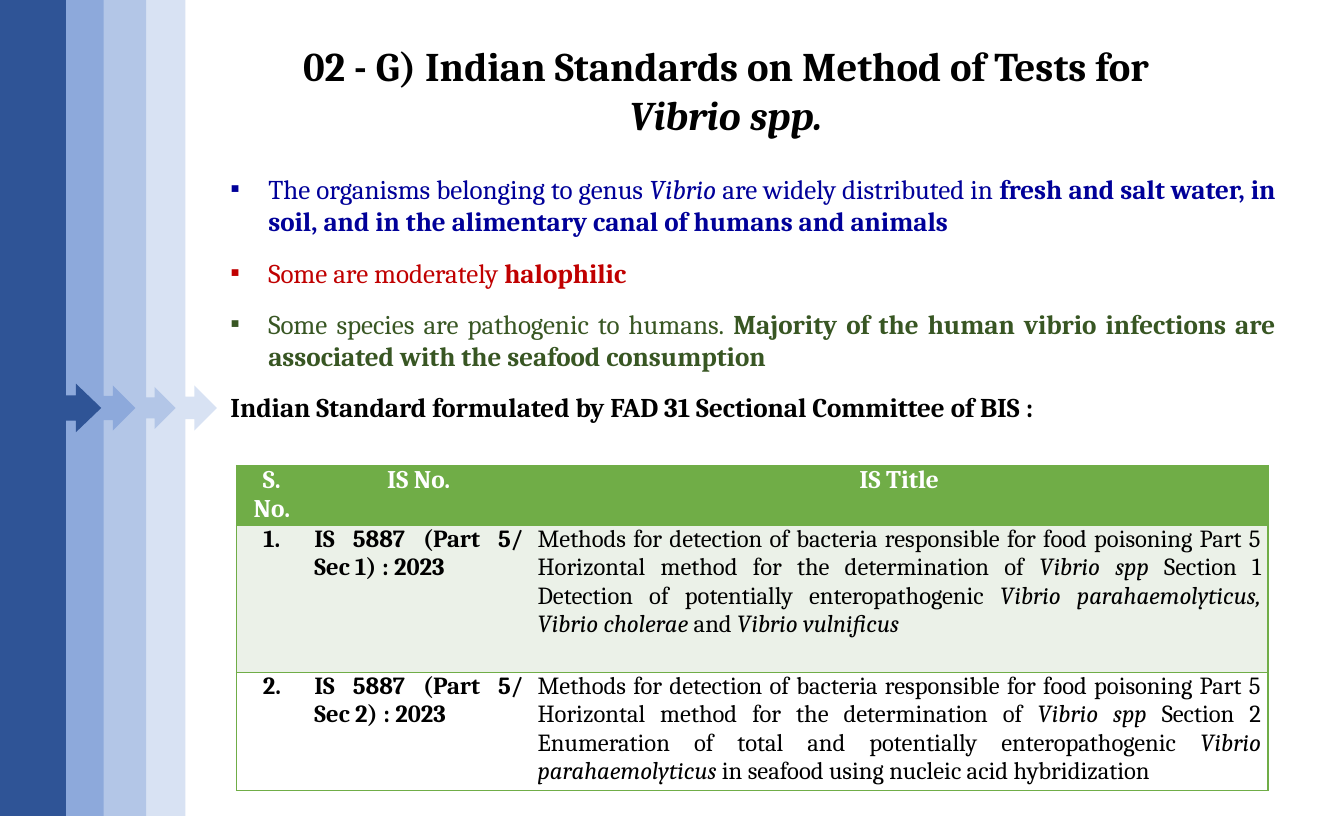
from lxml.etree import SubElement
from pptx import Presentation
from pptx.dml.color import RGBColor
from pptx.enum.shapes import MSO_SHAPE
from pptx.enum.text import MSO_ANCHOR, MSO_AUTO_SIZE, PP_ALIGN
from pptx.oxml import parse_xml
from pptx.oxml.ns import nsdecls, qn
from pptx.util import Cm, Pt

FONT = "Cambria"
COLORS = {
    "black": "000000", "white": "FFFFFF", "navy": "000099", "red": "C00000",
    "dark green": "385623", "green": "70AD47", "pale green": "EBF1E8",
    "blue 1": "2F5496", "blue 2": "8DA9DB", "blue 3": "B3C6E7", "blue 4": "D8E2F3",
}

# Each span is (text, style): "b" is bold, "i" is italic
TITLE = [("02 - G) Indian Standards on Method of Tests for ", "b"), ("Vibrio spp.", "bi")]
BULLETS = [
    ("navy", [("The organisms belonging to genus", ""), (" Vibrio ", "i"),
              ("are widely distributed in ", ""),
              ("fresh and salt water, in soil, and in the alimentary canal "
               "of humans and animals", "b")]),
    ("red", [("Some are moderately ", ""), ("halophilic", "b")]),
    ("dark green", [("Some species are pathogenic to humans. ", ""),
                    ("Majority of the human vibrio infections are associated "
                     "with the seafood consumption", "b")]),
]
TABLE_LEAD = [("Indian Standard formulated by FAD 31 Sectional Committee of BIS :", "b")]

HEADINGS = ["S. No.", "IS No.", "IS Title"]
METHOD = [("Methods for detection of bacteria responsible for food poisoning Part 5 "
           "Horizontal method for the determination of ", ""), ("Vibrio spp ", "i")]
STANDARDS = [
    [("Section 1 Detection of potentially enteropathogenic ", ""),
     ("Vibrio parahaemolyticus, Vibrio cholerae", "i"), (" and ", ""),
     ("Vibrio vulnificus", "i")],
    [("Section 2 Enumeration of total and potentially enteropathogenic ", ""),
     ("Vibrio parahaemolyticus", "i"),
     (" in seafood using nucleic acid hybridization", "")],
]
COLUMN_WIDTHS = [1.47, 4.65, 15.37]
ROW_HEIGHTS = [1.25, 3.06, 2.46]

# Left, width, shaft and head proportions and colour, from back to front
ARROWS = [
    (2.64, 1.88, 0.25, 0.25, "blue 4"),
    (1.91, 1.75, 0.25, 0.25, "blue 3"),
    (0.94, 1.88, 0.27, 0.25, "blue 2"),
    (0, 2.11, 0.25, 0.24, "blue 1"),
]


def rgb(name):
    return RGBColor.from_string(COLORS[name])


def write_spans(para, spans, size, color, align):
    para.alignment = align
    para.line_spacing = 1.0
    for text, style in spans:
        span = para.add_run()
        span.text = text
        span.font.name = FONT
        span.font.size = Pt(size)
        span.font.bold = "b" in style
        span.font.italic = "i" in style
        span.font.color.rgb = rgb(color)


def set_bullet(para, color=None):
    """Hang a square bullet on the paragraph, or remove its bullet."""
    properties = para._p.get_or_add_pPr()
    hang = Cm(0.79) if color else 0
    properties.set("marL", str(hang))
    properties.set("indent", str(-hang))
    if color:
        bullet_color = SubElement(properties, qn("a:buClr"))
        SubElement(bullet_color, qn("a:srgbClr"), val=COLORS[color])
        SubElement(properties, qn("a:buFont"), typeface="Arial")
        SubElement(properties, qn("a:buChar"), char="▪")
    else:
        SubElement(properties, qn("a:buNone"))


def place_text(box, left, top, width, height, anchor):
    box.left, box.top, box.width, box.height = Cm(left), Cm(top), Cm(width), Cm(height)
    frame = box.text_frame
    frame.word_wrap = True
    frame.auto_size = MSO_AUTO_SIZE.NONE
    frame.vertical_anchor = anchor
    frame.margin_left = frame.margin_right = Cm(0.25)
    frame.margin_top = frame.margin_bottom = Cm(0.13)
    return frame


def fill_body(box):
    frame = place_text(box, 4.55, 3.46, 22.28, 5.54, MSO_ANCHOR.TOP)
    for index, (color, spans) in enumerate(BULLETS + [("black", TABLE_LEAD)]):
        para = frame.add_paragraph() if index else frame.paragraphs[0]
        write_spans(para, spans, 16, color, PP_ALIGN.JUSTIFY)
        para.space_before = Pt(11 if index else 0)
        para.space_after = Pt(0)
        set_bullet(para, color if index < len(BULLETS) else None)


def set_borders(cell, sides):
    """Draw green lines on the given sides and clear the others."""
    properties = cell._tc.get_or_add_tcPr()
    for index, side in enumerate("LRTB"):
        paint = (f'<a:solidFill><a:srgbClr val="{COLORS["green"]}"/></a:solidFill>'
                 if side in sides else "<a:noFill/>")
        properties.insert(index, parse_xml(
            f'<a:ln{side} {nsdecls("a")} w="{Pt(1)}">{paint}</a:ln{side}>'))


def fill_cell(cell, spans, size, color, align, fill, margin, sides):
    cell.fill.solid()
    cell.fill.fore_color.rgb = rgb(fill)
    cell.margin_left = cell.margin_right = Cm(margin)
    cell.margin_top = cell.margin_bottom = 0
    write_spans(cell.text_frame.paragraphs[0], spans, size, color, align)
    set_borders(cell, sides)


def add_standards_table(page):
    table = page.shapes.add_table(
        len(ROW_HEIGHTS), len(COLUMN_WIDTHS), Cm(4.93), Cm(9.7),
        Cm(sum(COLUMN_WIDTHS)), Cm(sum(ROW_HEIGHTS))).table
    table.horz_banding = False
    for column, width in zip(table.columns, COLUMN_WIDTHS):
        column.width = Cm(width)
    for row, height in zip(table.rows, ROW_HEIGHTS):
        row.height = Cm(height)

    sides = ["LTB", "TB", "RTB"]
    for column, heading in enumerate(HEADINGS):
        fill_cell(table.cell(0, column), [(heading, "b")], 15, "white",
                  PP_ALIGN.CENTER, "green", 0.13, sides[column])
    for number, section in enumerate(STANDARDS, start=1):
        contents = [[(f"{number}.", "b")],
                    [(f"IS 5887 (Part 5/ Sec {number}) : 2023", "b")],
                    METHOD + section]
        fill = "pale green" if number % 2 else "white"
        for column, spans in enumerate(contents):
            align = PP_ALIGN.JUSTIFY if column else PP_ALIGN.CENTER
            fill_cell(table.cell(number, column), spans, 14.5, "black",
                      align, fill, 0.15, sides[column])


def add_arrow_band(page, height, left, width, shaft, head, color):
    band = page.shapes.add_shape(MSO_SHAPE.RIGHT_ARROW_CALLOUT,
                                 Cm(left), 0, Cm(width), height)
    for index, value in enumerate((shaft, head, 0.25, 0.65)):
        band.adjustments[index] = value
    band.shadow.inherit = False
    band.fill.solid()
    band.fill.fore_color.rgb = rgb(color)
    band.line.fill.background()


def main():
    deck = Presentation()
    deck.slide_width, deck.slide_height = Cm(28), Cm(17)
    page = deck.slides.add_slide(deck.slide_layouts[1])

    # Title and bullets
    title = place_text(page.shapes.title, 5.51, 0.71, 19.23, 2.31, MSO_ANCHOR.MIDDLE)
    write_spans(title.paragraphs[0], TITLE, 24, "black", PP_ALIGN.CENTER)
    fill_body(page.placeholders[1])

    # Table of standards
    add_standards_table(page)

    # Arrow bands down the left edge
    for arrow in ARROWS:
        add_arrow_band(page, deck.slide_height, *arrow)

    deck.save("out.pptx")


if __name__ == "__main__":
    main()
